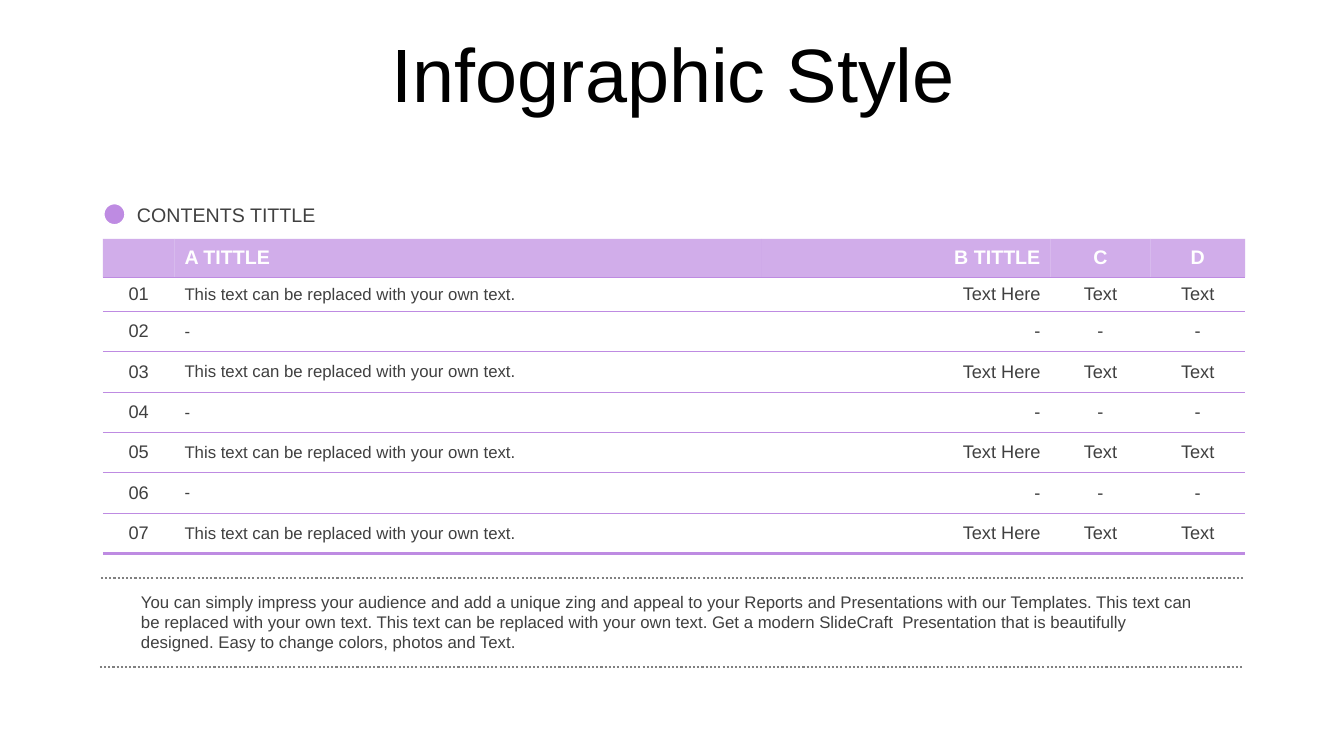
"""Build the infographic slide with a contents table and a framed note."""
from dataclasses import dataclass
from typing import Any

from lxml.etree import SubElement
from pptx import Presentation
from pptx.dml.color import RGBColor
from pptx.enum.dml import MSO_LINE
from pptx.enum.shapes import MSO_CONNECTOR as CONNECTOR, MSO_SHAPE as SHAPE
from pptx.enum.text import MSO_ANCHOR as ANCHOR, PP_ALIGN as ALIGN
from pptx.oxml.ns import qn
from pptx.util import Inches, Pt

PURPLE = RGBColor(0xBE, 0x8B, 0xE2)
DARK = RGBColor(0x40, 0x40, 0x40)
GRAY = RGBColor(0x80, 0x80, 0x80)
BLACK = RGBColor(0, 0, 0)
WHITE = RGBColor(0xFF, 0xFF, 0xFF)


@dataclass
class TextItem:
    text: str
    left: float
    top: float
    width: float
    height: float
    size: float
    color: RGBColor = DARK
    anchor: Any = ANCHOR.TOP
    paragraph_format: dict[str, Any] | None = None


@dataclass
class Column:
    title: str
    width: float
    align: Any
    size: float
    odd_text: str = ""
    even_text: str = "-"


TEXTS = [
    TextItem("Infographic Style", 0.35, 0.31, 12.66, 0.92, 54, BLACK, ANCHOR.MIDDLE,
             {"alignment": ALIGN.CENTER, "line_spacing": 0.9}),
    TextItem("You can simply impress your audience and add a unique zing and appeal to your "
             "Reports and Presentations with our Templates. This text can be replaced with "
             "your own text. This text can be replaced with your own text. Get a modern "
             "SlideCraft  Presentation that is beautifully designed. Easy to change colors, "
             "photos and Text.", 1.3, 5.82, 10.75, 0.71, 12),
    TextItem("CONTENTS TITTLE", 1.26, 1.96, 3.15, 0.34, 14),
]
COLUMNS = [
    Column("", 0.71, ALIGN.CENTER, 13),
    Column("A TITTLE", 5.82, ALIGN.LEFT, 12, "This text can be replaced with your own text."),
    Column("B TITTLE", 2.87, ALIGN.RIGHT, 13, "Text Here"),
    Column("C", 0.99, ALIGN.CENTER, 13, "Text"),
    Column("D", 0.94, ALIGN.CENTER, 13, "Text"),
]
ROW_HEIGHTS = [0.38, 0.34] + [0.4] * 6
RULE_WIDTHS = [0, 1] + [0.75] * 6 + [2.25]


def set_format(target: Any, values: dict[str, Any]) -> None:
    """Set every named attribute on the target."""
    for name, value in values.items():
        setattr(target, name, value)


def write(paragraph: Any, text: str, size: float, color: RGBColor, bold: bool = False) -> None:
    """Add one run of text to the paragraph."""
    run = paragraph.add_run()
    run.text = text
    set_format(run.font, {"name": "Arial", "size": Pt(size), "bold": bold})
    run.font.color.rgb = color


def add_text(slide: Any, item: TextItem) -> None:
    """Add a wrapped text box."""
    box = slide.shapes.add_textbox(
        *map(Inches, (item.left, item.top, item.width, item.height)))
    frame = box.text_frame
    set_format(frame, {"word_wrap": True, "vertical_anchor": item.anchor})
    paragraph = frame.paragraphs[0]
    set_format(paragraph, item.paragraph_format or {})
    write(paragraph, item.text, item.size, item.color)


def add_borders(cell: Any, top: float, bottom: float) -> None:
    """Draw the horizontal cell borders and clear the vertical ones."""
    properties = cell._tc.get_or_add_tcPr()
    for tag, width in (("a:lnL", 0), ("a:lnR", 0), ("a:lnT", top), ("a:lnB", bottom)):
        line = SubElement(properties, qn(tag), w=str(Pt(width)))
        if width:
            fill = SubElement(line, qn("a:solidFill"))
            SubElement(fill, qn("a:srgbClr"), val=str(PURPLE))
        else:
            SubElement(line, qn("a:noFill"))


def fill_header(cell: Any) -> None:
    """Fill a header cell with translucent purple."""
    cell.fill.solid()
    cell.fill.fore_color.rgb = PURPLE
    for color in cell._tc.tcPr.findall(f"{qn('a:solidFill')}/{qn('a:srgbClr')}"):
        SubElement(color, qn("a:alpha"), val="70000")


def add_contents_table(slide: Any) -> None:
    """Add the contents table."""
    width = sum(column.width for column in COLUMNS)
    frame = slide.shapes.add_table(
        len(ROW_HEIGHTS), len(COLUMNS),
        *map(Inches, (1.02, 2.37, width, sum(ROW_HEIGHTS))))
    table = frame.table
    set_format(table, {"first_row": False, "horz_banding": False})
    for table_column, column in zip(table.columns, COLUMNS):
        table_column.width = Inches(column.width)
    for row, height in enumerate(ROW_HEIGHTS):
        table.rows[row].height = Inches(height)
        for index, column in enumerate(COLUMNS):
            cell = table.cell(row, index)
            set_format(cell, {"vertical_anchor": ANCHOR.MIDDLE,
                              "margin_top": Inches(0.03), "margin_bottom": Inches(0.03)})
            add_borders(cell, RULE_WIDTHS[row], RULE_WIDTHS[row + 1])
            paragraph = cell.text_frame.paragraphs[0]
            paragraph.alignment = column.align
            if row == 0:
                fill_header(cell)
                if column.title:
                    write(paragraph, column.title, 14, WHITE, bold=True)
                continue
            cell.fill.background()
            body = column.odd_text if row % 2 else column.even_text
            write(paragraph, body if index else f"{row:02}", column.size, DARK)


def add_dotted_rule(slide: Any, left: float, top: float) -> None:
    """Add a dotted horizontal rule."""
    rule = slide.shapes.add_connector(
        CONNECTOR.STRAIGHT, *map(Inches, (left, top, left + 11.34, top)))
    rule.line.color.rgb = GRAY
    set_format(rule.line, {"width": Pt(1.5), "dash_style": MSO_LINE.ROUND_DOT})
    SubElement(rule._element.spPr, qn("a:effectLst"))


def add_bullet_dot(slide: Any) -> None:
    """Add the dot beside the contents heading."""
    dot = slide.shapes.add_shape(SHAPE.OVAL, *map(Inches, (1.03, 2.02, 0.21, 0.21)))
    dot.shadow.inherit = False
    dot.fill.solid()
    dot.fill.fore_color.rgb = PURPLE
    dot.line.color.rgb = WHITE
    dot.line.width = Pt(1)


def main() -> None:
    """Build and save the presentation."""
    presentation = Presentation()
    set_format(presentation, {"slide_width": Inches(13.33), "slide_height": Inches(7.5)})
    slide = presentation.slides.add_slide(presentation.slide_layouts[6])
    add_contents_table(slide)
    for item in TEXTS:
        add_text(slide, item)
    for left, top in ((1, 5.73), (0.99, 6.62)):
        add_dotted_rule(slide, left, top)
    add_bullet_dot(slide)
    presentation.save("out.pptx")


if __name__ == "__main__":
    main()
